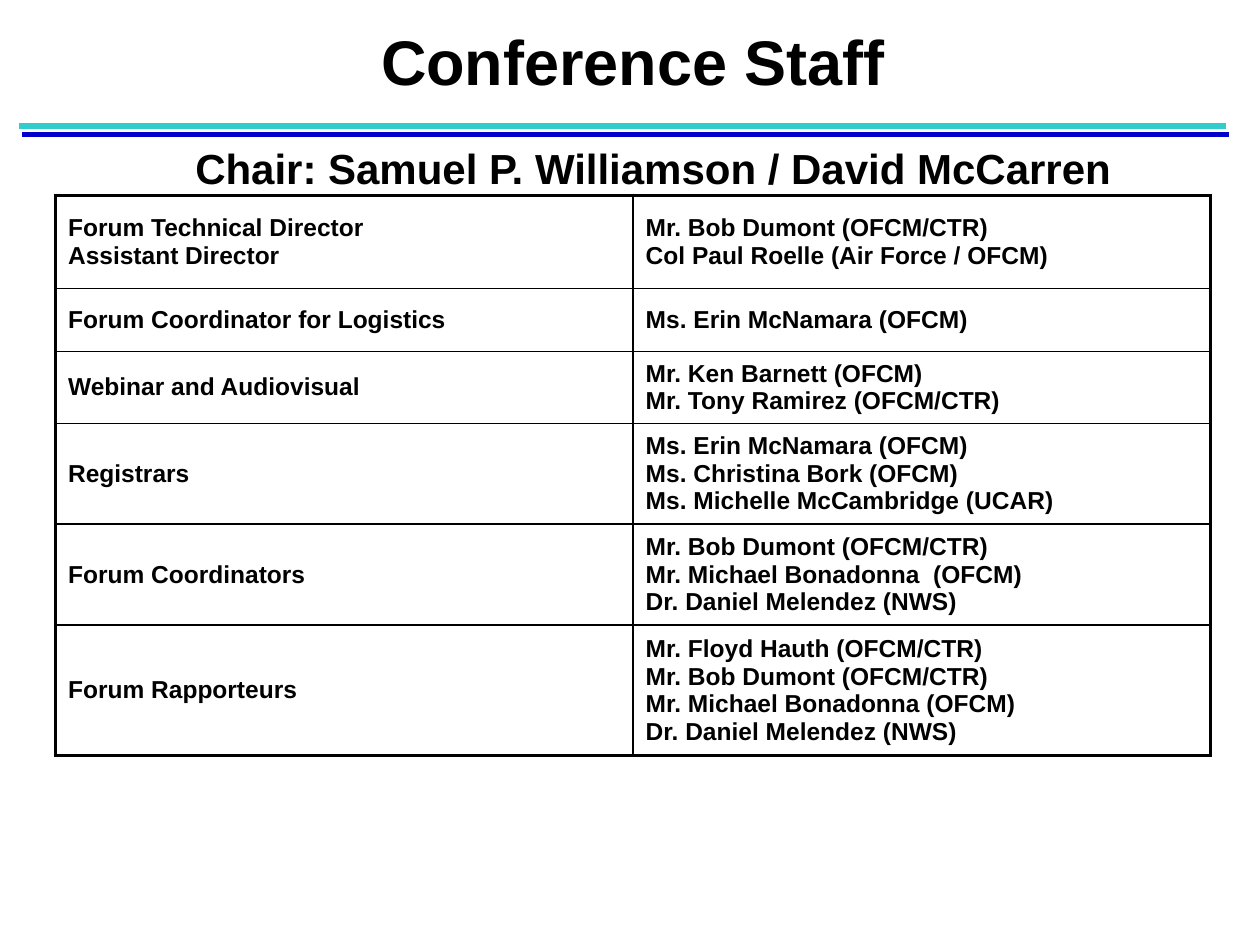
import dataclasses

import pptx
import pptx.dml.color
import pptx.enum.shapes
import pptx.enum.text
import pptx.oxml
import pptx.oxml.ns
import pptx.util

Inches = pptx.util.Inches
Pt = pptx.util.Pt
ANCHOR = pptx.enum.text.MSO_ANCHOR
FONT = "Arial"
BLACK, WHITE, TEAL, BLUE = "000000", "FFFFFF", "33CCCC", "0000CC"
OUTER_BORDER, INNER_BORDER = 2.25, 1


@dataclasses.dataclass
class StaffRow:
    roles: list[str]
    people: list[str]
    height: float


STAFF = [
    StaffRow(["Forum Technical Director", "Assistant Director"],
             ["Mr. Bob Dumont (OFCM/CTR)", "Col Paul Roelle (Air Force / OFCM)"], 0.74),
    StaffRow(["Forum Coordinator for Logistics"], ["Ms. Erin McNamara (OFCM)"], 0.5),
    StaffRow(["Webinar and Audiovisual"],
             ["Mr. Ken Barnett (OFCM)", "Mr. Tony Ramirez (OFCM/CTR)"], 0.57),
    StaffRow(["Registrars"],
             ["Ms. Erin McNamara (OFCM)", "Ms. Christina Bork (OFCM)",
              "Ms. Michelle McCambridge (UCAR)"], 0.8),
    StaffRow(["Forum Coordinators"],
             ["Mr. Bob Dumont (OFCM/CTR)", "Mr. Michael Bonadonna  (OFCM)",
              "Dr. Daniel Melendez (NWS)"], 0.8),
    StaffRow(["Forum Rapporteurs"],
             ["Mr. Floyd Hauth (OFCM/CTR)", "Mr. Bob Dumont (OFCM/CTR)",
              "Mr. Michael Bonadonna (OFCM)", "Dr. Daniel Melendez (NWS)"], 1.03),
]


def color(value: str) -> pptx.dml.color.RGBColor:
    return pptx.dml.color.RGBColor.from_string(value)


def write_lines(frame, lines: list[str], size: float, align=None, spacing=None) -> None:
    for index, line in enumerate(lines):
        paragraph = frame.add_paragraph() if index else frame.paragraphs[0]
        paragraph.alignment = align
        paragraph.line_spacing = spacing
        run = paragraph.add_run()
        run.text = line
        run.font.name = FONT
        run.font.size = Pt(size)
        run.font.bold = True
        run.font.color.rgb = color(BLACK)


def write_heading(shape, box: tuple, text: str, size: float, spacing=None) -> None:
    """Place a shape and fill it with one centred line."""
    shape.left, shape.top, shape.width, shape.height = map(Inches, box)
    frame = shape.text_frame
    frame.word_wrap = True
    frame.auto_size = pptx.enum.text.MSO_AUTO_SIZE.SHAPE_TO_FIT_TEXT
    frame.vertical_anchor = ANCHOR.TOP
    write_lines(frame, [text], size, pptx.enum.text.PP_ALIGN.CENTER, spacing)


def set_borders(cell, widths: dict[str, float]) -> None:
    properties = cell._tc.get_or_add_tcPr()
    for side in "LRTB":
        properties.append(pptx.oxml.parse_xml(
            f'<a:ln{side} {pptx.oxml.ns.nsdecls("a")} w="{Pt(widths[side])}">'
            f'<a:solidFill><a:srgbClr val="{BLACK}"/></a:solidFill></a:ln{side}>'))


def add_staff_table(slide) -> None:
    height = sum(row.height for row in STAFF)
    table = slide.shapes.add_table(
        len(STAFF), 2, Inches(0.44), Inches(1.55), Inches(9.17), Inches(height)).table
    table.first_row = False
    table.horz_banding = False
    last = len(STAFF) - 1
    for row_index, row in enumerate(STAFF):
        table.rows[row_index].height = Inches(row.height)
        for column_index, lines in enumerate((row.roles, row.people)):
            cell = table.cell(row_index, column_index)
            outer = {"L": column_index == 0, "R": column_index == 1,
                     "T": row_index == 0, "B": row_index == last}
            set_borders(cell, {side: OUTER_BORDER if is_outer else INNER_BORDER
                               for side, is_outer in outer.items()})
            cell.fill.solid()
            cell.fill.fore_color.rgb = color(WHITE)
            cell.vertical_anchor = ANCHOR.MIDDLE
            write_lines(cell.text_frame, lines, 14)


def add_title_rule(slide) -> None:
    """Draw the teal rule with its hard blue shadow."""
    rule = slide.shapes.add_connector(
        pptx.enum.shapes.MSO_CONNECTOR.STRAIGHT,
        Inches(0.15), Inches(1), Inches(9.73), Inches(1))
    rule.line.color.rgb = color(TEAL)
    rule.line.width = Pt(3)
    rule._element.spPr.append(pptx.oxml.parse_xml(
        f'<a:effectLst {pptx.oxml.ns.nsdecls("a")}>'
        f'<a:outerShdw dist="{Pt(5.4)}" dir="{68 * 60000}" algn="ctr" rotWithShape="0">'
        f'<a:srgbClr val="{BLUE}"/></a:outerShdw></a:effectLst>'))


def main() -> None:
    presentation = pptx.Presentation()
    presentation.slide_width = Inches(10)
    presentation.slide_height = Inches(7.5)
    slide = presentation.slides.add_slide(presentation.slide_layouts.get_by_name("Title Only"))
    write_heading(slide.shapes.title, (0.76, 0.22, 8.53, 0.61), "Conference Staff", 36, 0.85)
    add_staff_table(slide)
    add_title_rule(slide)
    chair = slide.shapes.add_textbox(0, 0, 0, 0)
    write_heading(chair, (0.93, 1.08, 8.51, 0.5),
                  "Chair: Samuel P. Williamson / David McCarren", 24)
    presentation.save("out.pptx")


if __name__ == "__main__":
    main()
